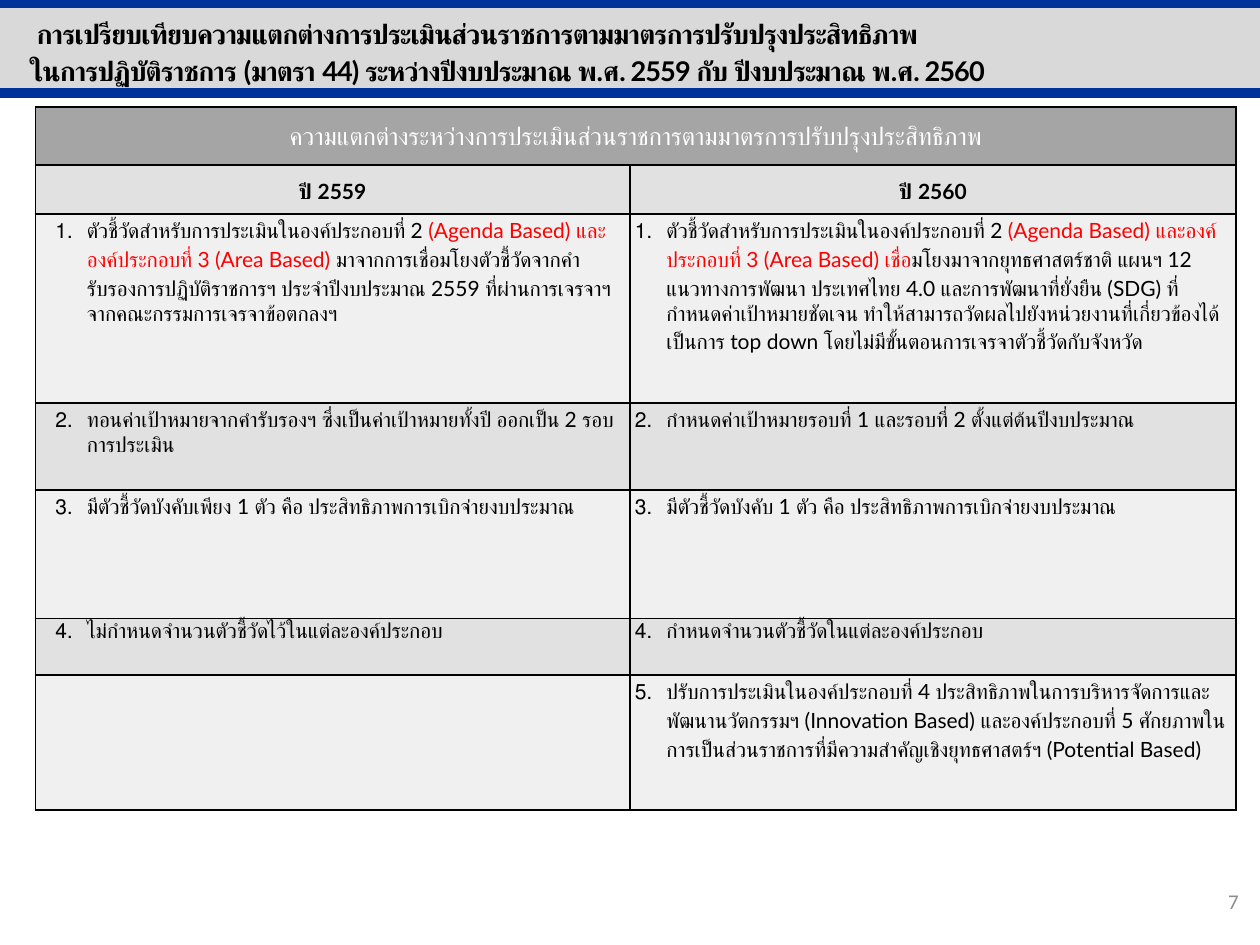
import pptx
import pptx.dml.color
import pptx.enum.shapes
import pptx.enum.text
import pptx.oxml.ns
import pptx.util
from lxml import etree

Inches, Pt = pptx.util.Inches, pptx.util.Pt
ALIGN = pptx.enum.text.PP_ALIGN
MIDDLE = pptx.enum.text.MSO_ANCHOR.MIDDLE
qn = pptx.oxml.ns.qn

# Content
TITLE = (" การเปรียบเทียบความแตกต่างการประเมินส่วนราชการตามมาตรการปรับปรุงประสิทธิภาพ\v"
         "ในการปฏิบัติราชการ (มาตรา 44) ระหว่างปีงบประมาณ พ.ศ. 2559 กับ ปีงบประมาณ พ.ศ. 2560")
TABLE_HEADING = "ความแตกต่างระหว่างการประเมินส่วนราชการตามมาตรการปรับปรุงประสิทธิภาพ"
YEARS = ["ปี 2559", "ปี 2560"]
PAGE_NUMBER = "7"

# Each item is a list of (text, colour) runs; one pair of items per row
BLACK, RED = "000000", "FF0000"
COMPARISON = [
    ([("ตัวชี้วัดสำหรับการประเมินในองค์ประกอบที่ 2 ", BLACK),
      ("(Agenda Based) และองค์ประกอบที่ 3 (Area Based) ", RED),
      ("มาจากการเชื่อมโยงตัวชี้วัดจากคำรับรองการปฏิบัติราชการฯ ประจำปีงบประมาณ 2559 "
       "ที่ผ่านการเจรจาฯ จากคณะกรรมการเจรจาข้อตกลงฯ", BLACK)],
     [("ตัวชี้วัดสำหรับการประเมินในองค์ประกอบที่ 2 ", BLACK),
      ("(Agenda Based) และองค์ประกอบที่ 3 (Area Based) เชื่อ", RED),
      ("มโยงมาจากยุทธศาสตร์ชาติ แผนฯ 12 แนวทางการพัฒนา ประเทศไทย 4.0 "
       "และการพัฒนาที่ยั่งยืน (SDG) ที่กำหนดค่าเป้าหมายชัดเจน "
       "ทำให้สามารถวัดผลไปยังหน่วยงานที่เกี่ยวข้องได้ เป็นการ top down "
       "โดยไม่มีขั้นตอนการเจรจาตัวชี้วัดกับจังหวัด", BLACK)]),
    ([("ทอนค่าเป้าหมายจากคำรับรองฯ ซึ่งเป็นค่าเป้าหมายทั้งปี ออกเป็น 2 รอบการประเมิน", BLACK)],
     [("กำหนดค่าเป้าหมายรอบที่ 1 และรอบที่ 2 ตั้งแต่ต้นปีงบประมาณ", BLACK)]),
    ([("มีตัวชี้วัดบังคับเพียง 1 ตัว คือ ประสิทธิภาพการเบิกจ่ายงบประมาณ", BLACK)],
     [("มีตัวชี้วัดบังคับ 1 ตัว คือ ประสิทธิภาพการเบิกจ่ายงบประมาณ", BLACK)]),
    ([("ไม่กำหนดจำนวนตัวชี้วัดไว้ในแต่ละองค์ประกอบ", BLACK)],
     [("กำหนดจำนวนตัวชี้วัดในแต่ละองค์ประกอบ", BLACK)]),
    ([],
     [("ปรับการประเมินในองค์ประกอบที่ 4 ประสิทธิภาพในการบริหารจัดการและพัฒนานวัตกรรมฯ "
       "(Innovation Based) และองค์ประกอบที่ 5 "
       "ศักยภาพในการเป็นส่วนราชการที่มีความสำคัญเชิงยุทธศาสตร์ฯ (Potential Based)", BLACK)]),
]

COLUMN_WIDTHS = [4.72, 4.81]
ROW_HEIGHTS = [0.46, 0.39, 1.5, 0.69, 1.02, 0.45, 1.07]
HEADING_FILL, ROW_FILLS = "A5A5A5", ["F0F0F0", "E1E1E1"]
ITEM_INDENTS = [0.37, 0.25]
HANGING = 0.25


def rgb(value):
    return pptx.dml.color.RGBColor.from_string(value)


def style(paragraph, size, color, bold=False, name="Lato", align=ALIGN.LEFT):
    paragraph.alignment = align
    font = paragraph.font
    font.size, font.bold, font.name = Pt(size), bold, name
    font.color.rgb = rgb(color)


def number_item(paragraph, number, indent):
    properties = paragraph._p.get_or_add_pPr()
    properties.set("marL", str(Inches(indent)))
    properties.set("indent", str(-Inches(HANGING)))
    etree.SubElement(properties, qn("a:buFont"), typeface="Arial")
    etree.SubElement(properties, qn("a:buAutoNum"), type="arabicPeriod", startAt=str(number))


def add_border(cell):
    properties = cell._tc.get_or_add_tcPr()
    for side in ("lnL", "lnR", "lnT", "lnB"):
        line = etree.SubElement(properties, qn("a:" + side), w=str(Pt(1)))
        fill = etree.SubElement(line, qn("a:solidFill"))
        etree.SubElement(fill, qn("a:srgbClr"), val=BLACK)


def add_text(slide, text, left, top, width, height):
    frame = slide.shapes.add_textbox(
        Inches(left), Inches(top), Inches(width), Inches(height)).text_frame
    frame.word_wrap = True
    paragraph = frame.paragraphs[0]
    paragraph.text = text
    return frame, paragraph


def add_header(slide):
    band = slide.shapes.add_shape(pptx.enum.shapes.MSO_SHAPE.RECTANGLE,
                                  0, Inches(0.05), Inches(10), Inches(0.68))
    band.shadow.inherit = False
    band.fill.solid()
    band.fill.fore_color.rgb = rgb("D9D9D9")
    band.line.fill.background()
    for y in (0.74, 0.02):
        rule = slide.shapes.add_connector(pptx.enum.shapes.MSO_CONNECTOR.STRAIGHT,
                                          0, Inches(y), Inches(10), Inches(y))
        rule.line.color.rgb = rgb("003399")
        rule.line.width = Pt(6)
        etree.SubElement(rule._element.spPr, qn("a:effectLst"))
    frame, paragraph = add_text(slide, TITLE, 0.14, 0.05, 9.17, 0.7)
    paragraph.line_spacing = 1.15
    style(paragraph, 15.5, BLACK, bold=True)
    for run in paragraph.runs:
        run._r.get_or_add_rPr().set("spc", "-50")


def add_comparison(slide):
    table = slide.shapes.add_table(
        len(ROW_HEIGHTS), len(COLUMN_WIDTHS), Inches(0.28), Inches(0.85),
        Inches(sum(COLUMN_WIDTHS)), Inches(sum(ROW_HEIGHTS))).table
    table.first_row = table.horz_banding = False
    for column, width in zip(table.columns, COLUMN_WIDTHS):
        column.width = Inches(width)
    for index, (row, height) in enumerate(zip(table.rows, ROW_HEIGHTS)):
        row.height = Inches(height)
        for cell in row.cells:
            cell.margin_left = cell.margin_right = Inches(0.04)
            cell.margin_top = cell.margin_bottom = 0
            add_border(cell)
            cell.fill.solid()
            cell.fill.fore_color.rgb = rgb(ROW_FILLS[index % 2] if index else HEADING_FILL)
            cell.text_frame.paragraphs[0].line_spacing = 1.15

    # Heading across both columns, then the years
    table.cell(0, 0).merge(table.cell(0, 1))
    headings = [(table.cell(0, 0), TABLE_HEADING, 14, "FFFFFF", False)]
    headings += [(table.cell(1, column), year, 12, BLACK, True)
                 for column, year in enumerate(YEARS)]
    for cell, text, size, color, bold in headings:
        cell.vertical_anchor = MIDDLE
        paragraph = cell.text_frame.paragraphs[0]
        paragraph.text = text
        style(paragraph, size, color, bold, align=ALIGN.CENTER)

    # Numbered items
    for number, items in enumerate(COMPARISON, 1):
        for column, runs in enumerate(items):
            if not runs:
                continue
            paragraph = table.cell(number + 1, column).text_frame.paragraphs[0]
            number_item(paragraph, number, ITEM_INDENTS[column])
            style(paragraph, 12, BLACK)
            for text, color in runs:
                run = paragraph.add_run()
                run.text = text
                if color != BLACK:
                    run.font.color.rgb = rgb(color)


def main():
    presentation = pptx.Presentation()
    presentation.slide_width, presentation.slide_height = Inches(10), Inches(7.5)
    slide = presentation.slides.add_slide(presentation.slide_layouts[6])
    add_header(slide)
    add_comparison(slide)
    frame, paragraph = add_text(slide, PAGE_NUMBER, 7.68, 6.95, 2.25, 0.4)
    frame.vertical_anchor = MIDDLE
    style(paragraph, 12, "8C8C8C", name="Calibri", align=ALIGN.RIGHT)
    presentation.save("out.pptx")


if __name__ == "__main__":
    main()
